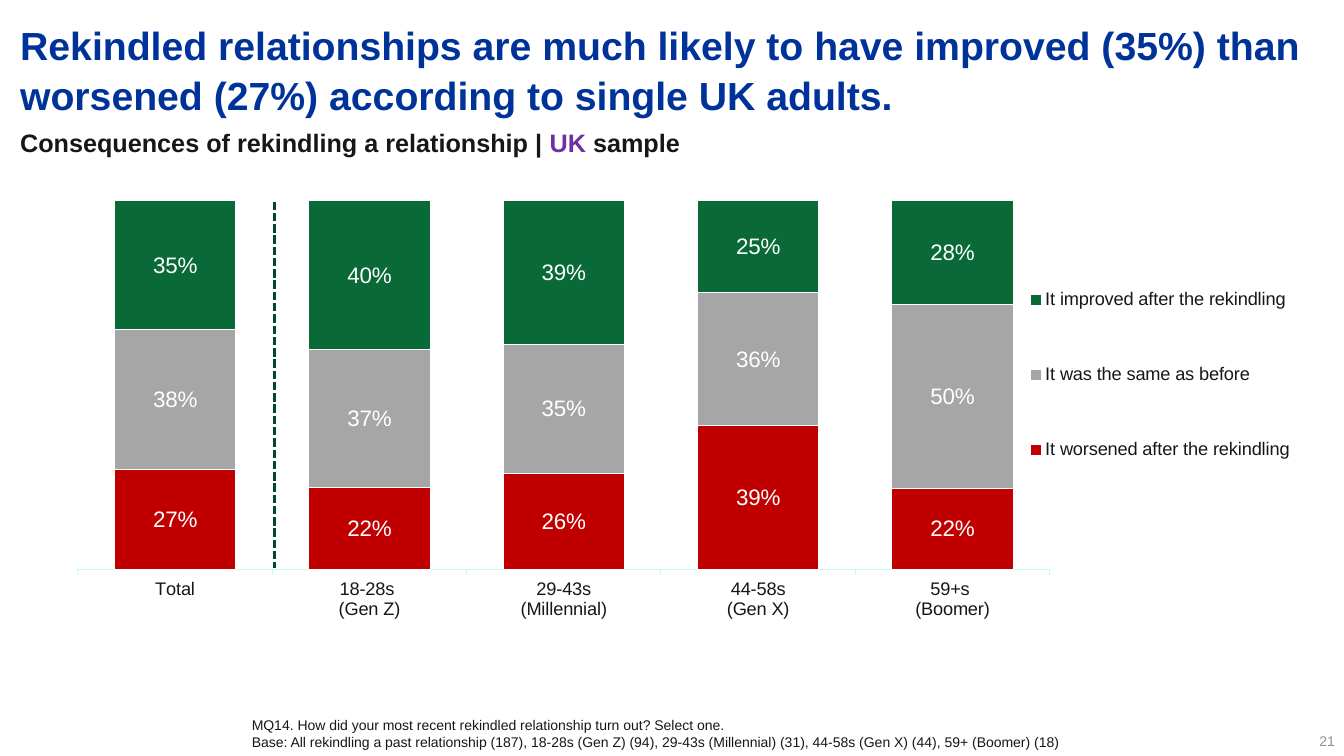
from lxml.etree import SubElement
from pptx import Presentation
from pptx.chart.data import CategoryChartData
from pptx.dml.color import RGBColor
from pptx.enum.chart import XL_CHART_TYPE as ChartType, XL_LEGEND_POSITION as LegendPosition
from pptx.enum.chart import XL_TICK_MARK as TickMark
from pptx.enum.dml import MSO_LINE_DASH_STYLE as Dash
from pptx.enum.shapes import MSO_CONNECTOR as Connector
from pptx.enum.text import MSO_ANCHOR as Anchor, PP_ALIGN as Align
from pptx.oxml import parse_xml
from pptx.oxml.ns import nsdecls, qn
from pptx.util import Inches, Pt

WIDTH, HEIGHT = Inches(13.33), Inches(7.5)
FONT = "Arial"
INK, BLUE, PURPLE, GREEN, WHITE = "181717", "003399", "7030A0", "014537", "FFFFFF"
NO_MARGINS = dict.fromkeys(("margin_left", "margin_right", "margin_top", "margin_bottom"), 0)

CATEGORIES = ["Total", "18-28s \n(Gen Z)", "29-43s\n(Millennial)", "44-58s\n(Gen X)", "59+s \n(Boomer)"]
OUTCOMES = [
    ("It worsened after the rekindling", "C00000", (0.27, 0.22, 0.26, 0.39, 0.22)),
    ("It was the same as before", "A6A6A6", (0.38, 0.37, 0.35, 0.36, 0.5)),
    ("It improved after the rekindling", "096A37", (0.35, 0.4, 0.39, 0.25, 0.28)),
]


def color(value):
    return RGBColor.from_string(value)


def across(percent):
    return round(WIDTH * percent / 100)


def down(percent):
    return round(HEIGHT * percent / 100)


def area(left, top, width, height):
    return across(left), down(top), across(width), down(height)


def apply(target, values):
    for name, value in values.items():
        setattr(target, name, value)


def style_font(font, size, value, bold=False):
    apply(font, {"name": FONT, "size": Pt(size), "bold": bold})
    font.color.rgb = color(value)


def style_line(line, value, width):
    line.color.rgb = color(value)
    line.width = Pt(width)


def add_text(slide, place, paragraphs, size, bold=False, frame_format=NO_MARGINS, paragraph_format=None):
    frame = slide.shapes.add_textbox(*area(*place)).text_frame
    apply(frame, {"word_wrap": True, **frame_format})
    for index, runs in enumerate(paragraphs):
        paragraph = frame.add_paragraph() if index else frame.paragraphs[0]
        apply(paragraph, paragraph_format or {})
        for text, value in runs:
            run = paragraph.add_run()
            run.text = text
            style_font(run.font, size, value, bold)


def place_part(parent, position, inner=False, **shares):
    layout = parse_xml(f"<c:layout {nsdecls('c')}><c:manualLayout/></c:layout>")
    settings = {"layoutTarget": "inner"} if inner else {}
    settings.update(xMode="edge", yMode="edge", **shares)
    for name, value in settings.items():
        SubElement(layout[0], qn(f"c:{name}")).set("val", str(value))
    for old in parent.findall(qn("c:layout")):
        parent.remove(old)
    parent.insert(position, layout)


def style_axes(chart):
    apply(chart.value_axis, {"minimum_scale": 0, "maximum_scale": 1, "major_unit": 0.2,
                             "has_major_gridlines": False, "visible": False})
    axis = chart.category_axis
    apply(axis, {"major_tick_mark": TickMark.OUTSIDE, "has_major_gridlines": False})
    style_font(axis.tick_labels.font, 13, INK)
    style_line(axis.format.line, "BEFEF1", 0.75)


def style_series(series, fill):
    series.format.fill.solid()
    series.format.fill.fore_color.rgb = color(fill)
    style_line(series.format.line, WHITE, 0.75)
    labels = series.data_labels
    apply(labels, {"show_value": True, "number_format": "0%", "number_format_is_linked": False})
    style_font(labels.font, 16, WHITE)


def add_outcome_chart(slide, place):
    data = CategoryChartData(number_format="0%")
    data.categories = CATEGORIES
    for name, _, values in OUTCOMES:
        data.add_series(name, values)
    chart = slide.shapes.add_chart(ChartType.COLUMN_STACKED_100, *area(*place), data).chart
    apply(chart, {"has_title": False, "has_legend": True})
    style_font(chart.font, 10, GREEN)
    style_axes(chart)
    plot = chart.plots[0]
    apply(plot, {"gap_width": 60, "overlap": 100, "vary_by_categories": False})
    for series, (_, fill, _) in zip(plot.series, OUTCOMES):
        style_series(series, fill)
    legend = chart.legend
    apply(legend, {"position": LegendPosition.RIGHT, "include_in_layout": False})
    style_font(legend.font, 13, INK)
    chart_xml = chart.element.find(qn("c:chart"))
    place_part(chart_xml.find(qn("c:plotArea")), 0, inner=True, x=0.026, y=0.075, w=0.776, h=0.698)
    place_part(chart_xml.find(qn("c:legend")), 1, x=0.78, y=0.14, w=0.22, h=0.53)


def add_divider(slide, x, top, bottom):
    divider = slide.shapes.add_connector(Connector.STRAIGHT, across(x), down(top), across(x), down(bottom))
    style_line(divider.line, GREEN, 2)
    divider.line.dash_style = Dash.SQUARE_DOT
    SubElement(divider.element.spPr, qn("a:effectLst"))


def main():
    presentation = Presentation()
    apply(presentation, {"slide_width": WIDTH, "slide_height": HEIGHT})
    slide = presentation.slides.add_slide(presentation.slide_layouts[6])
    add_text(slide, (94.9, 95.87, 4.43, 3.2), [[("21", "8C9491")]], 10,
             frame_format={**NO_MARGINS, "vertical_anchor": Anchor.BOTTOM},
             paragraph_format={"alignment": Align.RIGHT})
    add_text(slide, (1.5, 16.8, 94.3, 4.93),
             [[("Consequences of rekindling a relationship | ", INK), ("UK", PURPLE), (" sample", INK)]],
             18, bold=True)
    add_text(slide, (1.5, 2.53, 96.47, 4.8),
             [[("Rekindled relationships are much likely to have improved (35%) than "
                "worsened (27%) according to single UK adults.", BLUE)]],
             28, bold=True, paragraph_format={"line_spacing": 1.05})
    add_text(slide, (18, 94.13, 78.54, 5.87), [
        [("MQ14. How did your most recent rekindled relationship turn out? Select one.", INK)],
        [("Base: All rekindling a past relationship (187), 18-28s (Gen Z) (94), 29-43s (Millennial) (31), "
          "44-58s (Gen X) (44), 59+ (Boomer) (18)", INK)],
    ], 10, frame_format={})
    add_outcome_chart(slide, (3.38, 21.33, 93.17, 69.87))
    add_divider(slide, 20.4, 26.67, 75.2)
    presentation.save("out.pptx")


if __name__ == "__main__":
    main()
